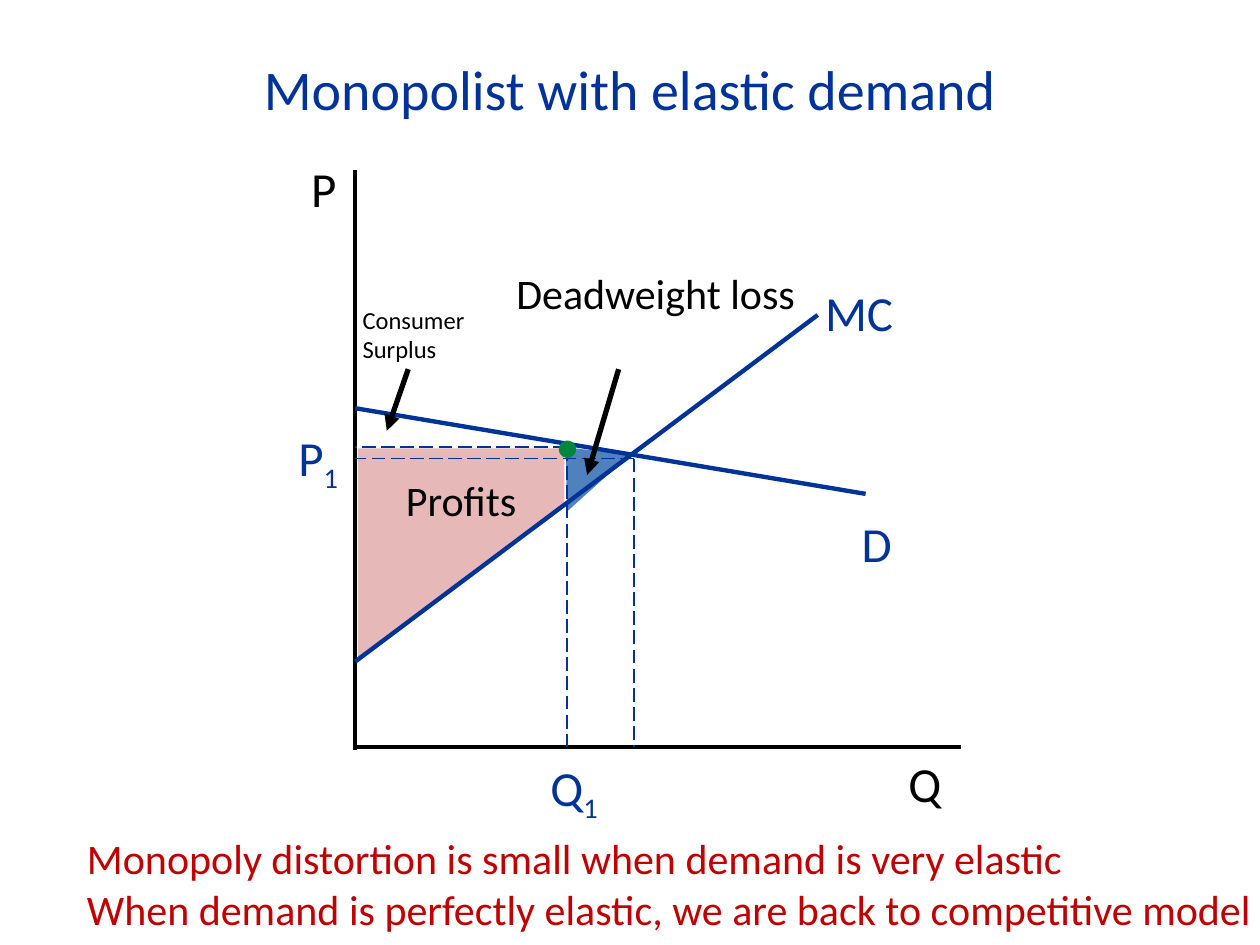
from dataclasses import dataclass
from typing import Any

from lxml.etree import SubElement
from pptx import Presentation
from pptx.dml.color import RGBColor
from pptx.enum.dml import MSO_LINE
from pptx.enum.shapes import MSO_CONNECTOR
from pptx.enum.text import MSO_ANCHOR, MSO_AUTO_SIZE, PP_ALIGN
from pptx.oxml.ns import qn
from pptx.util import Inches, Pt

COLUMNS, ROWS = 100, 75
CELL = Inches(0.1)
BLACK, BLUE, RED, GREEN = "000000", "003399", "C00000", "00863D"
PINK, STEEL = "E6B9B8", "4F81BD"
AXIS_X, AXIS_Y = 28.2, 59.3
MONOPOLY_X, MONOPOLY_Y = 45, 35.5
MARKET_X, MARKET_Y = 50.3, 36.4

Point = tuple[float, float]


@dataclass(frozen=True)
class Label:
    text: str
    column: float
    row: float
    columns: float
    rows: float
    size: int = 28
    color: str = BLUE
    subscript: str = ""
    spacing: float = 1.0
    align: PP_ALIGN = PP_ALIGN.LEFT
    right_inset: float = 1


@dataclass(frozen=True)
class Stroke:
    start: Point
    end: Point
    color: str = BLUE
    width: float = 2.5
    dashed: bool = False
    arrow: bool = False


@dataclass(frozen=True)
class Area:
    points: tuple[Point, ...]
    color: str
    text: str = ""


AREAS = (
    Area(((45, 40.6), (44.9, 35.5), (50, 36.1)), STEEL),
    Area(((28.4, 52.2), (28.4, 35.6), (44.8, 35.6), (44.8, 40.2)), PINK, "Profits"),
)
STROKES = (
    Stroke((AXIS_X, 13.5), (AXIS_X, 59.5), BLACK),
    Stroke((AXIS_X, AXIS_Y), (76.3, AXIS_Y), BLACK),
    Stroke((AXIS_X, 32.4), (68.7, 39.2)),
    Stroke((AXIS_X, 52.5), (64.9, 25)),
    Stroke((MONOPOLY_X, MONOPOLY_Y), (AXIS_X, MONOPOLY_Y), width=1, dashed=True),
    Stroke((MONOPOLY_X, MONOPOLY_Y), (MONOPOLY_X, AXIS_Y), width=1, dashed=True),
    Stroke((MARKET_X, MARKET_Y), (MARKET_X, AXIS_Y), width=1, dashed=True),
    Stroke((MARKET_X, MARKET_Y), (AXIS_X, MARKET_Y), width=1, dashed=True),
    Stroke((49.1, 29.3), (46.6, 37.7), BLACK, 3, arrow=True),
    Stroke((32.4, 29.3), (30.7, 34.2), BLACK, 3, arrow=True),
)
LABELS = (
    Label("Q", 42.7, 60.1, 6.4, 4.8, subscript="1", spacing=0.8),
    Label("Q", 68.7, 59.3, 8.8, 5.7, color=BLACK, align=PP_ALIGN.RIGHT, right_inset=2.8),
    Label("P", 23.7, 13, 4.5, 4.9, color=BLACK, spacing=0.8),
    Label("D", 67.4, 40.3, 9.2, 5.7),
    Label("P", 22.7, 33.9, 5.4, 4.9, subscript="1", spacing=0.8),
    Label("MC", 64.5, 21.9, 9.2, 5.7),
    Label("Consumer\nSurplus", 27.8, 23.7, 12, 8.8, 14, BLACK),
    Label("Deadweight loss", 40, 20.7, 26, 8.1, 24, BLACK),
    Label("•", 43.1, 32.4, 3.3, 5.7, color=GREEN),
)
TITLE = Label("Monopolist with elastic demand", 7, 3.8, 86, 6.4, 32, align=PP_ALIGN.CENTER)
CONCLUSIONS = Label(
    "Monopoly distortion is small when demand is very elastic\n"
    "When demand is perfectly elastic, we are back to competitive model",
    5.9, 65.6, 101.2, 9.1, 24, RED,
)


def cells(count: float) -> int:
    return round(count * CELL)


def rgb(color: str) -> RGBColor:
    return RGBColor.from_string(color)


def assign(target: Any, values: dict[str, Any]) -> None:
    for name, value in values.items():
        setattr(target, name, value)


def format_run(run: Any, size: int, color: str) -> None:
    assign(run.font, {"name": "Calibri", "size": Pt(size), "bold": False})
    run.font.color.rgb = rgb(color)


def fill_text(shape: Any, label: Label, anchor: MSO_ANCHOR = MSO_ANCHOR.TOP) -> None:
    frame = shape.text_frame
    assign(frame, {
        "word_wrap": True,
        "auto_size": MSO_AUTO_SIZE.NONE,
        "vertical_anchor": anchor,
        "margin_right": cells(label.right_inset),
    })
    frame.text = label.text
    for paragraph in frame.paragraphs:
        assign(paragraph, {
            "alignment": label.align,
            "line_spacing": label.spacing,
            "space_before": Pt(0),
        })
        if label.subscript:
            run = paragraph.add_run()
            run.text = label.subscript
            run._r.get_or_add_rPr().set("baseline", "-25000")
        for run in paragraph.runs:
            format_run(run, label.size, label.color)


def place(shape: Any, label: Label) -> None:
    assign(shape, {
        "left": cells(label.column),
        "top": cells(label.row),
        "width": cells(label.columns),
        "height": cells(label.rows),
    })


def remove_bullets(shape: Any) -> None:
    for paragraph in shape.text_frame.paragraphs:
        properties = paragraph._p.get_or_add_pPr()
        properties.set("marL", "0")
        properties.set("indent", "0")
        SubElement(properties, qn("a:buNone"))


def draw_area(slide: Any, area: Area) -> None:
    first, *others = [(cells(x), cells(y)) for x, y in area.points]
    builder = slide.shapes.build_freeform(*first)
    builder.add_line_segments(others, close=True)
    shape = builder.convert_to_shape()
    shape.shadow.inherit = False
    shape.fill.solid()
    shape.fill.fore_color.rgb = rgb(area.color)
    shape.line.fill.background()
    if area.text:
        shape.text_frame.margin_top = cells(2.1)
        fill_text(shape, Label(area.text, 0, 0, 0, 0, 24, BLACK, align=PP_ALIGN.CENTER))


def draw_stroke(slide: Any, stroke: Stroke) -> None:
    ends = [cells(value) for value in (*stroke.start, *stroke.end)]
    connector = slide.shapes.add_connector(MSO_CONNECTOR.STRAIGHT, *ends)
    connector.line.color.rgb = rgb(stroke.color)
    connector.line.width = Pt(stroke.width)
    if stroke.dashed:
        connector.line.dash_style = MSO_LINE.LONG_DASH
    if stroke.arrow:
        SubElement(connector.line._get_or_add_ln(), qn("a:tailEnd"), type="triangle")
    SubElement(connector._element.spPr, qn("a:effectLst"))


def draw_label(slide: Any, label: Label) -> None:
    box = slide.shapes.add_textbox(0, 0, 0, 0)
    place(box, label)
    fill_text(box, label)


def main() -> None:
    presentation = Presentation()
    assign(presentation, {"slide_width": COLUMNS * CELL, "slide_height": ROWS * CELL})
    slide = presentation.slides.add_slide(presentation.slide_layouts[1])
    title, body = slide.shapes.title, slide.placeholders[1]
    place(title, TITLE)
    fill_text(title, TITLE, MSO_ANCHOR.MIDDLE)
    place(body, CONCLUSIONS)
    fill_text(body, CONCLUSIONS)
    remove_bullets(body)
    for area in AREAS:
        draw_area(slide, area)
    for stroke in STROKES:
        draw_stroke(slide, stroke)
    for label in LABELS:
        draw_label(slide, label)
    presentation.save("out.pptx")


if __name__ == "__main__":
    main()
